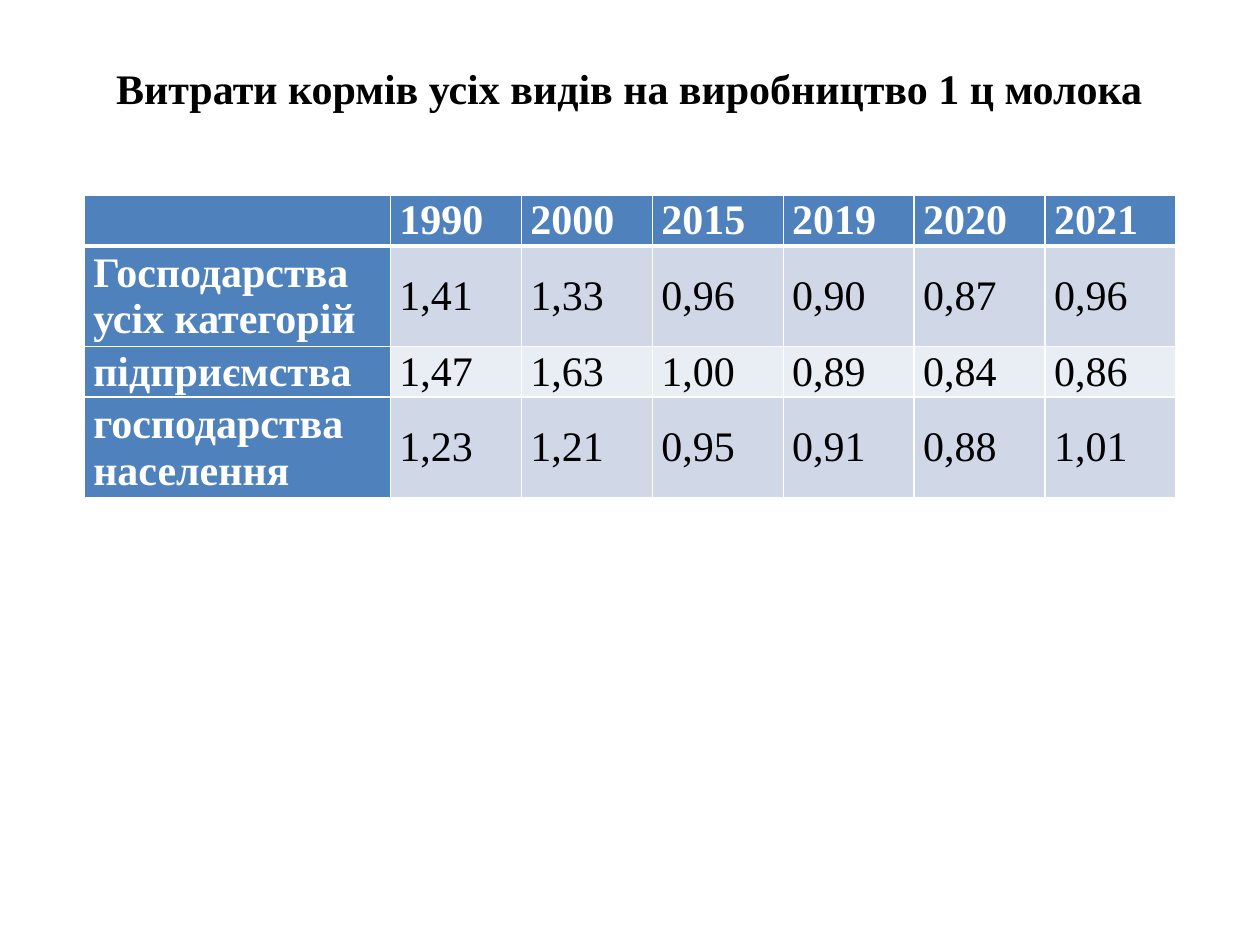
"""Build a slide with a table of feed use per centner of milk."""
import pptx
import pptx.util
import pptx.dml.color
import pptx.enum.text
import pptx.oxml
import pptx.oxml.ns
import lxml.etree

Cm = pptx.util.Cm
Pt = pptx.util.Pt

TITLE = "Витрати кормів усіх видів на виробництво 1 ц молока"
ROWS = [
    ("", "1990", "2000", "2015", "2019", "2020", "2021"),
    ("Господарства усіх категорій", "1,41", "1,33", "0,96", "0,90", "0,87", "0,96"),
    ("підприємства", "1,47", "1,63", "1,00", "0,89", "0,84", "0,86"),
    ("господарства населення", "1,23", "1,21", "0,95", "0,91", "0,88", "1,01"),
]
COLORS = {
    "head": "4F81BD",
    "odd": "D0D8E8",
    "even": "E9EDF4",
    "white": "FFFFFF",
    "black": "000000",
}
COL_WIDTHS = [6.17] + [2.64] * 6
ROW_HEIGHTS = [1.01, 2.03, 1.01, 2.03]


def rgb(name):
    return pptx.dml.color.RGBColor.from_string(COLORS[name])


def put_text(tf, text, color="black", bold=False, size=24, align=None):
    p = tf.paragraphs[0]
    p.alignment = align
    r = p.add_run()
    r.text = text
    r.font.name = "Times New Roman"
    r.font.size = Pt(size)
    r.font.bold = bold
    r.font.color.rgb = rgb(color)


def add_border(cell, side, width):
    ln = lxml.etree.SubElement(
        cell._tc.get_or_add_tcPr(), pptx.oxml.ns.qn(f"a:ln{side}"), w=str(Pt(width))
    )
    fill = lxml.etree.SubElement(ln, pptx.oxml.ns.qn("a:solidFill"))
    lxml.etree.SubElement(fill, pptx.oxml.ns.qn("a:srgbClr"), val=COLORS["white"])


def format_cell(cell, row, col):
    head = row == 0 or col == 0
    widths = {"L": 1, "R": 1, "T": 3 if row == 1 else 1, "B": 3 if row == 0 else 1}
    for side, width in widths.items():
        add_border(cell, side, width)
    cell.fill.solid()
    cell.fill.fore_color.rgb = rgb("head" if head else "odd" if row % 2 else "even")
    cell.margin_left = cell.margin_right = Cm(0.18)
    cell.margin_top = cell.margin_bottom = 0
    cell.vertical_anchor = pptx.enum.text.MSO_ANCHOR.MIDDLE
    if ROWS[row][col]:
        put_text(cell.text_frame, ROWS[row][col],
                 color="white" if head else "black", bold=head)


def add_table(s):
    table = s.shapes.add_table(
        len(ROWS), len(COL_WIDTHS), Cm(1.7), Cm(3.94),
        Cm(sum(COL_WIDTHS)), Cm(sum(ROW_HEIGHTS)),
    ).table
    table.first_col = True
    for column, width in zip(table.columns, COL_WIDTHS):
        column.width = Cm(width)
    for row, height in zip(table.rows, ROW_HEIGHTS):
        row.height = Cm(height)
    for i in range(len(ROWS)):
        for j in range(len(COL_WIDTHS)):
            format_cell(table.cell(i, j), i, j)


def add_title(s):
    sp = s.shapes.title
    sp.left, sp.top, sp.width, sp.height = Cm(1.98), Cm(1.12), Cm(21.41), Cm(1.3)
    tf = sp.text_frame
    tf.word_wrap = False
    tf.auto_size = pptx.enum.text.MSO_AUTO_SIZE.SHAPE_TO_FIT_TEXT
    tf.vertical_anchor = pptx.enum.text.MSO_ANCHOR.MIDDLE
    put_text(tf, TITLE, bold=True, align=pptx.enum.text.PP_ALIGN.CENTER)


def main():
    prs = pptx.Presentation()
    prs.slide_width, prs.slide_height = Cm(25.4), Cm(19.05)
    s = prs.slides.add_slide(prs.slide_layouts[5])
    add_table(s)
    add_title(s)
    prs.save("out.pptx")


if __name__ == "__main__":
    main()
